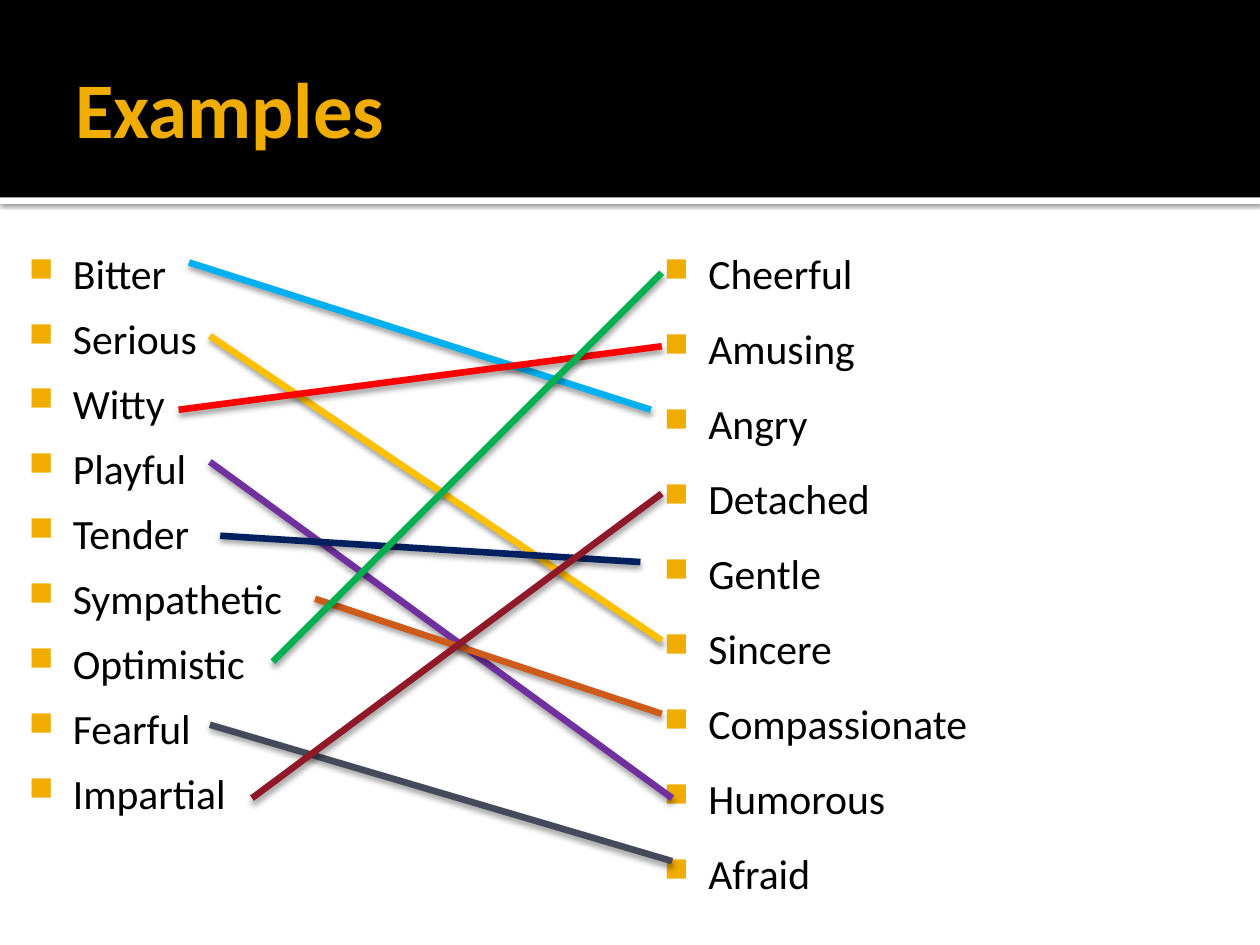
from lxml import etree
from pptx import Presentation
from pptx.dml.color import RGBColor
from pptx.enum.shapes import MSO_CONNECTOR, MSO_SHAPE
from pptx.enum.text import MSO_ANCHOR, MSO_AUTO_SIZE, PP_ALIGN
from pptx.oxml.ns import qn
from pptx.util import Cm, Pt

RECTANGLE = MSO_SHAPE.RECTANGLE
STRAIGHT = MSO_CONNECTOR.STRAIGHT
TOP, MIDDLE = MSO_ANCHOR.TOP, MSO_ANCHOR.MIDDLE
LEFT = PP_ALIGN.LEFT
NO_AUTOFIT = MSO_AUTO_SIZE.NONE
TWO_CONTENT = 3

FONT = "Calibri"
BULLET_FONT = "OpenSymbol"
COLORS = {
    "band": "000000",
    "rule": "FFFFFF",
    "accent": "F0AD00",
    "text": "000000",
    "shadow": "000000",
    "sky": "00B0F0",
    "amber": "FFC000",
    "red": "FF0000",
    "purple": "7030A0",
    "navy": "002060",
    "rust": "CF5B1B",
    "green": "00B050",
    "slate": "444A5A",
    "maroon": "901929",
}

TONES = ["Bitter", "Serious", "Witty", "Playful", "Tender", "Sympathetic",
         "Optimistic", "Fearful", "Impartial"]
SYNONYMS = ["Cheerful", "Amusing", "Angry", "Detached", "Gentle", "Sincere",
            "Compassionate", "Humorous", "Afraid"]
MATCHES = [
    ("sky", 3.81, 5.29, 13.12, 8.26),
    ("amber", 4.23, 6.77, 13.34, 12.91),
    ("red", 3.6, 8.26, 13.34, 6.98),
    ("purple", 4.23, 9.31, 13.55, 16.09),
    ("navy", 4.44, 10.8, 12.91, 11.33),
    ("rust", 6.35, 12.07, 13.34, 14.39),
    ("green", 5.5, 13.34, 13.34, 5.5),
    ("slate", 4.23, 14.61, 13.55, 17.36),
    ("maroon", 5.08, 16.09, 13.34, 9.95),
]


def color(name):
    return RGBColor.from_string(COLORS[name])


def add_child(parent, tag, **attributes):
    child = etree.SubElement(parent, qn(tag))
    for key, value in attributes.items():
        child.set(key, str(value))
    return child


def add_shadow(properties, blur, distance, opacity):
    effects = add_child(properties, "a:effectLst")
    shadow = add_child(effects, "a:outerShdw", blurRad=Pt(blur), dist=Pt(distance),
                       dir=90 * 60000, algn="t", rotWithShape=0)
    tint = add_child(shadow, "a:srgbClr", val=COLORS["shadow"])
    add_child(tint, "a:alpha", val=opacity * 1000)


def add_backdrop(slide, top, height, fill):
    backdrop = slide.shapes.add_shape(RECTANGLE, 0, Cm(top), Cm(25.4), Cm(height))
    backdrop.fill.solid()
    backdrop.fill.fore_color.rgb = color(fill)
    backdrop.line.fill.background()
    slide.shapes._spTree.insert(2, backdrop._element)
    return backdrop


def place_text(placeholder, box, margins, anchor):
    placeholder.left, placeholder.top, placeholder.width, placeholder.height = map(Cm, box)
    frame = placeholder.text_frame
    (frame.margin_left, frame.margin_top,
     frame.margin_right, frame.margin_bottom) = map(Cm, margins)
    frame.vertical_anchor = anchor
    frame.word_wrap = True
    frame.auto_size = NO_AUTOFIT
    return frame


def style_paragraph(paragraph, size, ink, bold=False):
    paragraph.alignment = LEFT
    paragraph.font.name = FONT
    paragraph.font.size = Pt(size)
    paragraph.font.bold = bold
    paragraph.font.color.rgb = color(ink)


def add_bullet(paragraph):
    properties = paragraph._p.get_or_add_pPr()
    properties.set("marL", str(Cm(1.22)))
    properties.set("indent", str(Cm(-0.89)))
    bullet_color = add_child(properties, "a:buClr")
    add_child(bullet_color, "a:srgbClr", val=COLORS["accent"])
    add_child(properties, "a:buSzPct", val=80000)
    add_child(properties, "a:buFont", typeface=BULLET_FONT)
    add_child(properties, "a:buChar", char="■")


def fill_title(placeholder, title):
    frame = place_text(placeholder, (1.27, 0.42, 22.86, 3.48),
                       (0.25, 0.13, 0.13, 0.13), MIDDLE)
    frame.text = title
    style_paragraph(frame.paragraphs[0], 45, "accent", bold=True)


def fill_word_list(placeholder, words, box, left_margin, line_spacing):
    frame = place_text(placeholder, box, (left_margin, 0.25, 0.25, 0.13), TOP)
    frame.text = "\n".join(words)
    for paragraph in frame.paragraphs:
        paragraph.line_spacing = line_spacing
        paragraph.space_before = Pt(0)
        paragraph.space_after = Pt(0)
        add_bullet(paragraph)
        style_paragraph(paragraph, 23.8, "text")


def add_match(slide, ink, *ends):
    match = slide.shapes.add_connector(STRAIGHT, *map(Cm, ends))
    match.line.color.rgb = color(ink)
    match.line.width = Pt(3.78)
    add_shadow(match._element.spPr, 3.5, 2, 38)


def main():
    presentation = Presentation()
    presentation.slide_width, presentation.slide_height = Cm(25.4), Cm(19.05)
    slide = presentation.slides.add_slide(presentation.slide_layouts[TWO_CONTENT])

    band = add_backdrop(slide, 0, 3.98, "band")
    band.shadow.inherit = False
    rule = add_backdrop(slide, 3.98, 0.13, "rule")
    add_shadow(rule._element.spPr, 2.5, 0.8, 60)

    title, tones, synonyms = slide.placeholders
    fill_title(title, "Examples")
    fill_word_list(tones, TONES, (0, 4.45, 12.7, 14.6), 0.25, 1.3)
    fill_word_list(synonyms, SYNONYMS, (12.91, 4.25, 11.85, 14.18), 0.15, 1.5)

    for match in MATCHES:
        add_match(slide, *match)
    presentation.save("out.pptx")


if __name__ == "__main__":
    main()
